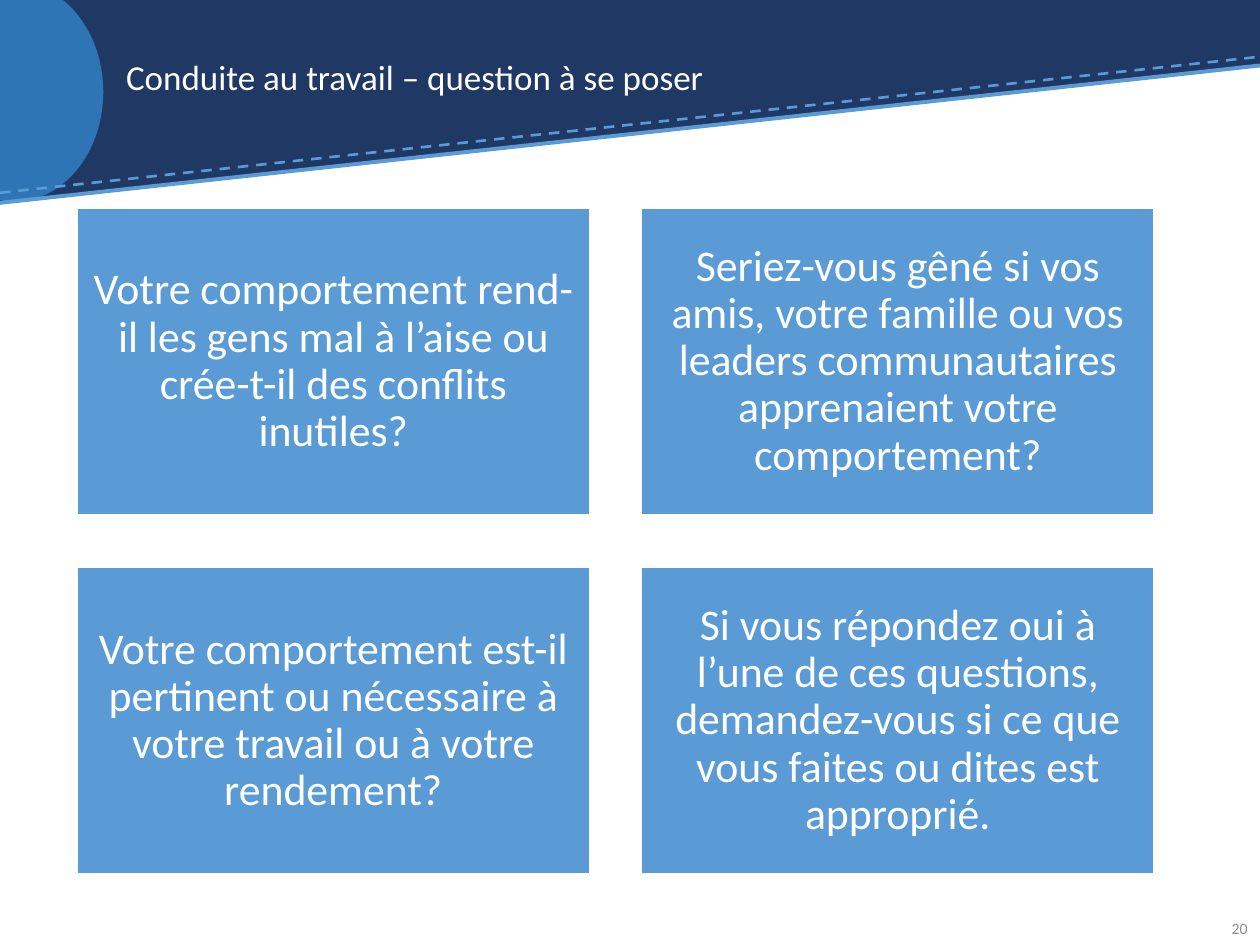
from dataclasses import dataclass

from lxml.etree import SubElement
from pptx import Presentation
from pptx.dml.color import RGBColor
from pptx.enum.dml import MSO_LINE_DASH_STYLE as DASH
from pptx.enum.shapes import MSO_CONNECTOR, MSO_SHAPE as SHAPE
from pptx.enum.text import MSO_ANCHOR as ANCHOR, PP_ALIGN as ALIGN
from pptx.oxml.ns import qn
from pptx.util import Inches, Pt

FONT = "Calibri"
NAVY, BLUE, SKY = "203864", "2E75B6", "5B9BD5"
WHITE, GREY = "FFFFFF", "8C8C8C"


@dataclass
class Box:
    left: float
    top: float
    width: float
    height: float

    def emu(self) -> tuple:
        return tuple(Inches(v) for v in (self.left, self.top, self.width, self.height))


def rgb(color: str) -> RGBColor:
    return RGBColor.from_string(color)


def add_block(s, kind, box: Box, fill: str, line: str = ""):
    sp = s.shapes.add_shape(kind, *box.emu())
    sp.shadow.inherit = False
    sp.fill.solid()
    sp.fill.fore_color.rgb = rgb(fill)
    if line:
        sp.line.color.rgb = rgb(line)
        sp.line.width = Pt(1)
    else:
        sp.line.fill.background()
    return sp


def add_rule(s, y1: float, y2: float, width: float, dash=None) -> None:
    cx = s.shapes.add_connector(
        MSO_CONNECTOR.STRAIGHT, 0, Inches(y1), Inches(10), Inches(y2))
    cx.line.color.rgb = rgb(SKY)
    cx.line.width = Pt(width)
    if dash:
        cx.line.dash_style = dash
    SubElement(cx.element.spPr, qn("a:effectLst"))


def write(tf, text: str, size: float, color: str, align, spacing: float = 1.0):
    tf.word_wrap = True
    tf.vertical_anchor = ANCHOR.MIDDLE
    p = tf.paragraphs[0]
    p.alignment = align
    p.line_spacing = spacing
    r = p.add_run()
    r.text = text
    r.font.name = FONT
    r.font.size = Pt(size)
    r.font.color.rgb = rgb(color)
    return p


def add_card(s, box: Box, text: str) -> None:
    tf = add_block(s, SHAPE.RECTANGLE, box, SKY, WHITE).text_frame
    tf.margin_left = tf.margin_right = tf.margin_top = tf.margin_bottom = Inches(0.1)
    write(tf, text, 25, WHITE, ALIGN.CENTER, 0.9)


QUESTIONS = [
    "Votre comportement rend-il les gens mal à l’aise ou crée-t-il des conflits inutiles?",
    "Seriez-vous gêné si vos amis, votre famille ou vos leaders communautaires "
    "apprenaient votre comportement?",
    "Votre comportement est-il pertinent ou nécessaire à votre travail ou à votre rendement?",
    "Si vous répondez oui à l’une de ces questions, demandez-vous si ce que vous "
    "faites ou dites est approprié.",
]


def main() -> None:
    prs = Presentation()
    prs.slide_width, prs.slide_height = Inches(10), Inches(7.5)
    s = prs.slides.add_slide(prs.slide_layouts[5])

    # Slanted header band
    add_block(s, SHAPE.RECTANGLE, Box(0, 0, 10, 0.52), NAVY)
    wedge = add_block(s, SHAPE.RIGHT_TRIANGLE, Box(0, 0.51, 10, 1.09), NAVY)
    wedge.element.spPr.get_or_add_xfrm().set("flipV", "1")
    add_block(s, SHAPE.OVAL, Box(-0.59, -0.14, 1.41, 1.74), BLUE)
    add_rule(s, 1.53, 0.45, 1.5, DASH.DASH)
    add_rule(s, 1.61, 0.52, 2.25)

    # Title, brought in front of the band
    title = s.shapes.title
    title.left, title.top, title.width, title.height = Box(0.9, 0.2, 8.05, 0.86).emu()
    write(title.text_frame, "Conduite au travail – question à se poser",
          20, WHITE, ALIGN.LEFT, 0.9)
    title.element.getparent().append(title.element)

    # Slide number
    number = s.shapes.add_textbox(*Box(9.47, 7.17, 0.53, 0.4).emu())
    write(number.text_frame, "20", 9, GREY, ALIGN.RIGHT).space_after = Pt(6)

    # Two-by-two grid of questions
    width, height, gap = 4.07, 2.44, 0.41
    for i, text in enumerate(QUESTIONS):
        row, col = divmod(i, 2)
        add_card(s, Box(0.61 + col * (width + gap), 1.65 + row * (height + gap),
                        width, height), text)

    prs.save("out.pptx")


if __name__ == "__main__":
    main()
